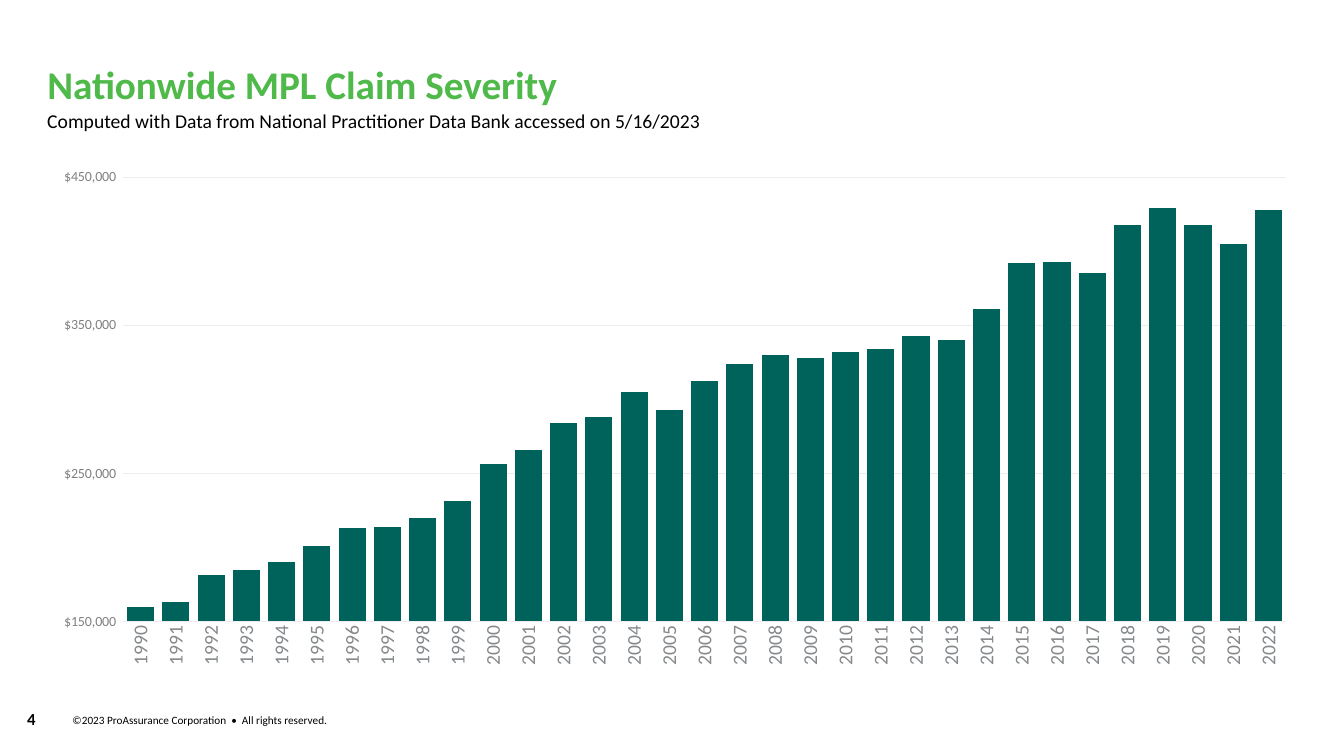
from lxml import etree
from pptx import Presentation
from pptx import util as u
from pptx.chart.data import CategoryChartData
from pptx.dml.color import RGBColor
from pptx.enum import chart as ch
from pptx.enum import text
from pptx.oxml.ns import qn

PX = 9525  # EMU per px, slide is 1280 x 720 px
FONT = "Calibri"
GREEN = RGBColor(0x4F, 0xB9, 0x4A)
TEAL = RGBColor(0x00, 0x63, 0x5B)
BLACK = RGBColor(0x00, 0x00, 0x00)
YEAR_GRAY = RGBColor(0x85, 0x89, 0x8C)
DOLLAR_GRAY = RGBColor(0x80, 0x80, 0x80)
GRID_GRAY = RGBColor(0xED, 0xED, 0xEE)

FIRST_YEAR = 1990
SEVERITY_THOUSANDS = [
    160, 163, 181, 185, 190, 201, 213, 214, 220, 231, 256,
    266, 284, 288, 305, 293, 312, 324, 330, 328, 332, 334,
    343, 340, 361, 392, 393, 385, 418, 429, 418, 405, 428,
]
# Plot area as fractions of the chart frame
PLOT_LAYOUT = {"x": 0.067, "y": 0.034, "w": 0.914, "h": 0.86}


def emu(*lengths):
    return [u.Emu(length * PX) for length in lengths]


def set_font(font, size, color, bold=False):
    font.name = FONT
    font.size = u.Pt(size)
    font.bold = bold
    font.color.rgb = color


def fill_text(shape, words, size, color, bold=False, inset=0,
              align=text.PP_ALIGN.LEFT):
    frame = shape.text_frame
    frame.word_wrap = True
    frame.auto_size = text.MSO_AUTO_SIZE.NONE
    frame.vertical_anchor = text.MSO_ANCHOR.MIDDLE
    frame.margin_left = frame.margin_right = 0
    frame.margin_top = frame.margin_bottom = inset * PX
    frame.text = words
    paragraph = frame.paragraphs[0]
    paragraph.alignment = align
    set_font(paragraph.runs[0].font, size, color, bold)
    return paragraph


def add_heading(slide, left, top, width):
    title = slide.shapes.title
    title.left, title.top, title.width, title.height = emu(left, top, width, 74)
    paragraph = fill_text(title, "Nationwide MPL Claim Severity", 28, GREEN,
                          bold=True, inset=10)
    paragraph.line_spacing = 0.9
    subtitle = slide.shapes.add_textbox(*emu(left, top + 57, 721, 23))
    fill_text(subtitle, "Computed with Data from National Practitioner Data Bank "
              "accessed on 5/16/2023", 14, BLACK)


def set_plot_layout(chart):
    plot_area = chart.plots[0]._element.getparent()
    for old_layout in plot_area.findall(qn("c:layout")):
        plot_area.remove(old_layout)
    layout = etree.Element(qn("c:layout"))
    manual = etree.SubElement(layout, qn("c:manualLayout"))
    settings = {"layoutTarget": "inner", "xMode": "edge", "yMode": "edge",
                **PLOT_LAYOUT}
    for name, value in settings.items():
        etree.SubElement(manual, qn("c:" + name)).set("val", str(value))
    plot_area.insert(0, layout)


def style_axes(chart):
    years, dollars = chart.category_axis, chart.value_axis
    for axis, size, color in ((years, 14, YEAR_GRAY), (dollars, 10, DOLLAR_GRAY)):
        axis.major_tick_mark = axis.minor_tick_mark = ch.XL_TICK_MARK.NONE
        set_font(axis.tick_labels.font, size, color)

    # Years read upwards
    years.has_major_gridlines = False
    body = years._element.find(qn("c:txPr")).find(qn("a:bodyPr"))
    body.set("rot", "-5400000")
    body.set("vert", "horz")

    dollars.minimum_scale, dollars.maximum_scale = 150000, 450000
    dollars.major_unit = 100000
    dollars.tick_labels.number_format = r'"$"#,##0_);[Red]\("$"#,##0\)'
    dollars.tick_labels.number_format_is_linked = False
    dollars.format.line.fill.background()
    for line in (years.format.line, dollars.major_gridlines.format.line):
        line.color.rgb = GRID_GRAY
        line.width = u.Pt(0.75)


def add_severity_chart(slide, left, top, width, height):
    data = CategoryChartData(number_format='"$"#,##0')
    data.categories = [str(FIRST_YEAR + i) for i in range(len(SEVERITY_THOUSANDS))]
    data.add_series("Series 1", [value * 1000 for value in SEVERITY_THOUSANDS])
    chart = slide.shapes.add_chart(ch.XL_CHART_TYPE.COLUMN_CLUSTERED,
                                   *emu(left, top, width, height), data).chart
    chart.has_title = chart.has_legend = False
    set_font(chart.font, 10, BLACK)
    plot = chart.plots[0]
    plot.gap_width = 30
    plot.vary_by_categories = False
    fill = plot.series[0].format.fill
    fill.solid()
    fill.fore_color.rgb = TEAL
    style_axes(chart)
    set_plot_layout(chart)


def add_footer(slide, left, top):
    number = slide.shapes.add_textbox(*emu(left, top, 78, 29))
    fill_text(number, "4", 12, BLACK, bold=True, align=text.PP_ALIGN.CENTER)
    rights = slide.shapes.add_textbox(*emu(left + 78, top + 10, 400, 12))
    fill_text(rights, "©2023 ProAssurance Corporation  •  All rights reserved.",
              8, BLACK)


def main():
    presentation = Presentation()
    presentation.slide_width, presentation.slide_height = emu(1280, 720)
    slide = presentation.slides.add_slide(presentation.slide_layouts[5])
    add_heading(slide, 45, 46, 1155)
    add_severity_chart(slide, 36, 152, 1212, 492)
    add_footer(slide, -9, 670)
    presentation.save("out.pptx")


if __name__ == "__main__":
    main()
